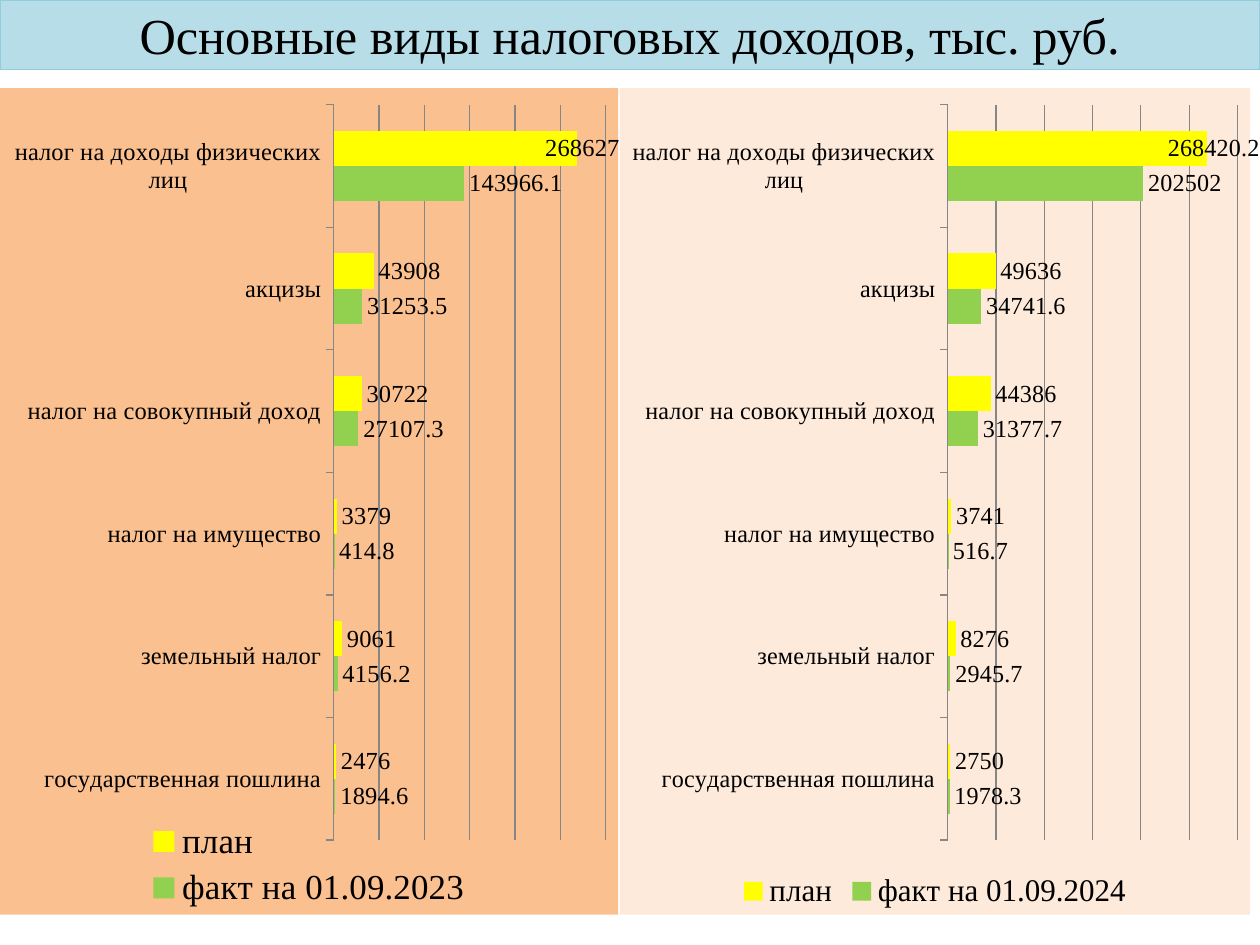
"""Build a slide comparing planned and actual tax revenue for two years."""
import pptx
import pptx.chart.data
import pptx.dml.color
import pptx.enum.chart
import pptx.enum.text
import pptx.oxml
import pptx.oxml.ns
import pptx.util

Inches, Pt = pptx.util.Inches, pptx.util.Pt
RGBColor = pptx.dml.color.RGBColor
BLACK = RGBColor(0x00, 0x00, 0x00)
GRAY = RGBColor(0x86, 0x86, 0x86)
YELLOW = RGBColor(0xFF, 0xFF, 0x00)
GREEN = RGBColor(0x92, 0xD0, 0x50)
PALE_BLUE = RGBColor(0xB7, 0xDE, 0xE8)
BLUE = RGBColor(0x93, 0xCD, 0xDD)
ORANGE = RGBColor(0xFA, 0xC0, 0x90)
PALE_ORANGE = RGBColor(0xFD, 0xEA, 0xDA)
SERIF = "Times New Roman"
NAMESPACES = pptx.oxml.ns.nsdecls("c", "a")

CATEGORIES = [
    "государственная пошлина", "земельный налог", "налог на имущество",
    "налог на совокупный доход", "акцизы", "налог на доходы физических лиц",
]
PANELS = [
    {"left": 4.92, "width": 5.08, "fill": PALE_ORANGE, "legend": 18, "year": 2024,
     "area": (0.52, 0.02, 0.46, 0.89), "shift": (-0.07, 0),
     "fact": (1978.3, 2945.7, 516.7, 31377.7, 34741.6, 202502),
     "plan": (2750, 8276, 3741, 44386, 49636, 268420.2)},
    {"left": 0, "width": 4.92, "fill": ORANGE, "legend": 20, "year": 2023,
     "area": (0.54, 0.02, 0.44, 0.89), "shift": (-0.06, 0),
     "fact": (1894.6, 4156.2, 414.8, 27107.3, 31253.5, 143966.1),
     "plan": (2476, 9061, 3379, 30722, 43908, 268627)},
]


def set_font(font, size, name=SERIF):
    for attribute, value in {"size": Pt(size), "name": name, "bold": False}.items():
        setattr(font, attribute, value)
    font.color.rgb = BLACK


def layout_xml(values, target=""):
    tags = "".join(f'<c:{tag} val="{value}"/>' for tag, value in zip("xywh", values))
    return pptx.oxml.parse_xml(
        f"<c:layout {NAMESPACES}><c:manualLayout>{target}{tags}</c:manualLayout></c:layout>")


deck = pptx.Presentation()
deck.slide_width, deck.slide_height = Inches(10), Inches(7.5)
page = deck.slides.add_slide(deck.slide_layouts[5])

title = page.shapes.title
bounds = {"left": 0, "top": 0, "width": deck.slide_width, "height": Inches(0.55)}
for attribute, value in bounds.items():
    setattr(title, attribute, value)
title.fill.solid()
title.fill.fore_color.rgb = PALE_BLUE
title.line.color.rgb = BLUE
title.line.width = Pt(0.75)
title.text_frame.vertical_anchor = pptx.enum.text.MSO_ANCHOR.MIDDLE
para = title.text_frame.paragraphs[0]
para.alignment = pptx.enum.text.PP_ALIGN.CENTER
span = para.add_run()
span.text = "Основные виды налоговых доходов, тыс. руб."
set_font(span.font, 28.8)

for panel in PANELS:
    data = pptx.chart.data.CategoryChartData()
    data.categories = CATEGORIES
    data.add_series(f"факт на 01.09.{panel['year']}", panel["fact"])
    data.add_series("план", panel["plan"])
    chart = page.shapes.add_chart(
        pptx.enum.chart.XL_CHART_TYPE.BAR_CLUSTERED, Inches(panel["left"]), Inches(0.7),
        Inches(panel["width"]), Inches(6.56), data).chart
    chart.has_title = False
    set_font(chart.font, 18, "Calibri")

    chart.has_legend = True
    chart.legend.position = pptx.enum.chart.XL_LEGEND_POSITION.BOTTOM
    chart.legend.include_in_layout = False
    set_font(chart.legend.font, panel["legend"])

    category_axis, value_axis = chart.category_axis, chart.value_axis
    category_axis.major_tick_mark = pptx.enum.chart.XL_TICK_MARK.OUTSIDE
    category_axis.format.line.color.rgb = GRAY
    set_font(category_axis.tick_labels.font, 14)
    scale = {"visible": False, "has_major_gridlines": True, "minimum_scale": 0,
             "maximum_scale": 300000, "major_unit": 50000}
    for attribute, value in scale.items():
        setattr(value_axis, attribute, value)
    value_axis.major_gridlines.format.line.color.rgb = GRAY

    plot = chart.plots[0]
    plot.gap_width, plot.overlap, plot.vary_by_categories = 150, 0, False
    for series, color in zip(plot.series, (GREEN, YELLOW)):
        series.format.fill.solid()
        series.format.fill.fore_color.rgb = color
        series.data_labels.show_value = True
        set_font(series.data_labels.font, 14)
    set_font(plot.series[1].points[5].data_label.font, 14)
    point_label = chart.element.xpath(".//c:dLbl")[0]
    point_label.insert(1, layout_xml(panel["shift"]))

    plot_area = chart.element.xpath(".//c:plotArea")[0]
    for automatic in plot_area.xpath("./c:layout"):
        plot_area.remove(automatic)
    modes = '<c:layoutTarget val="inner"/><c:xMode val="edge"/><c:yMode val="edge"/>'
    plot_area.insert(0, layout_xml(panel["area"], modes))
    chart.element.xpath("./c:chart")[0].addnext(pptx.oxml.parse_xml(
        f'<c:spPr {NAMESPACES}><a:solidFill><a:srgbClr val="{panel["fill"]}"/></a:solidFill>'
        "<a:ln><a:noFill/></a:ln></c:spPr>"))

deck.save("out.pptx")
